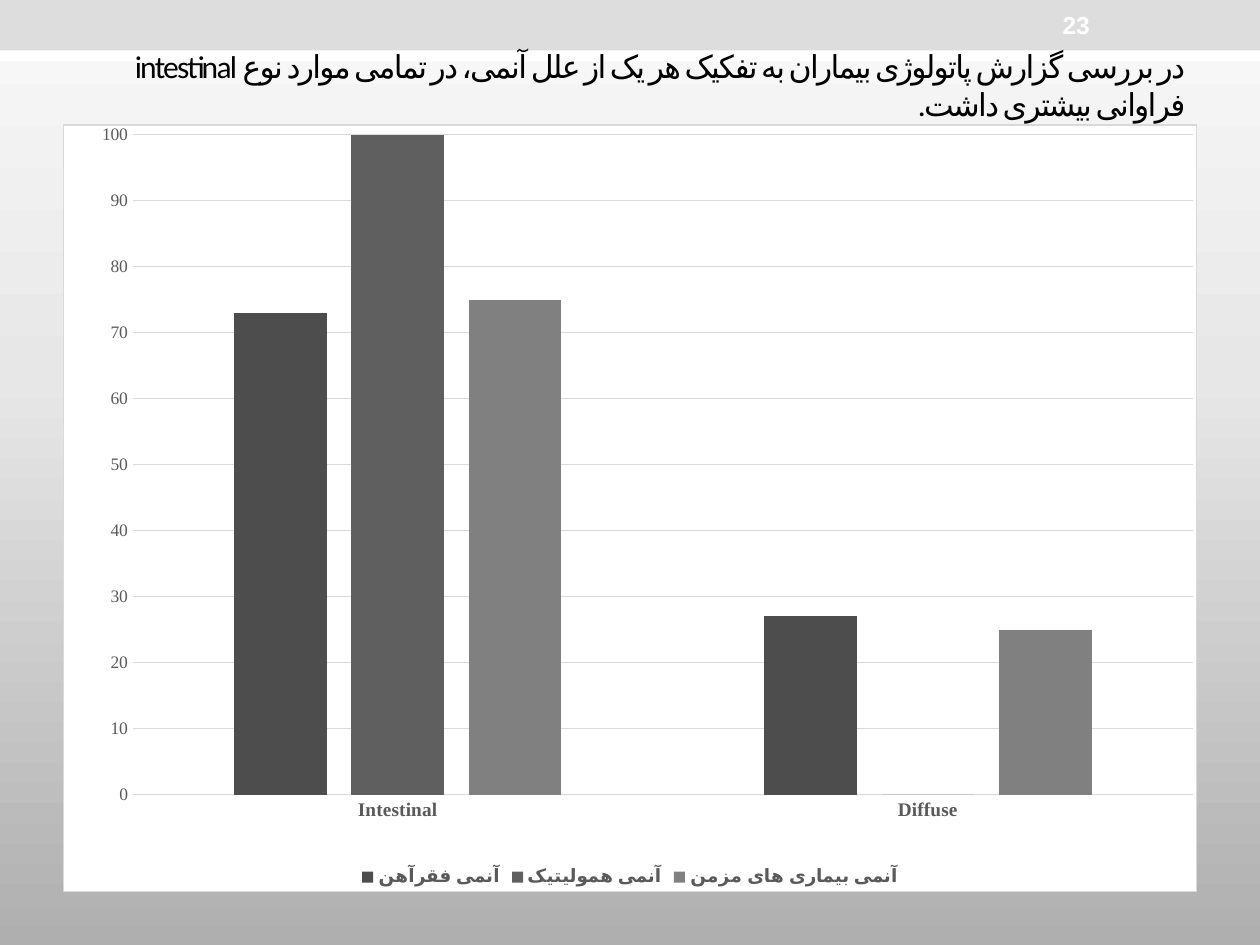
from copy import deepcopy
from typing import NamedTuple

from lxml import etree
from pptx import Presentation
from pptx.chart.data import CategoryChartData
from pptx.dml.color import RGBColor
from pptx.enum.chart import XL_CHART_TYPE, XL_LEGEND_POSITION, XL_TICK_MARK
from pptx.enum.shapes import MSO_SHAPE
from pptx.enum.text import MSO_ANCHOR, MSO_AUTO_SIZE, PP_ALIGN
from pptx.oxml import parse_xml
from pptx.oxml.ns import nsdecls, qn
from pptx.util import Pt

COLUMNS = XL_CHART_TYPE.COLUMN_CLUSTERED
BOTTOM = XL_LEGEND_POSITION.BOTTOM
NO_TICKS = XL_TICK_MARK.NONE
RECTANGLE = MSO_SHAPE.RECTANGLE
MIDDLE = MSO_ANCHOR.MIDDLE
FIXED = MSO_AUTO_SIZE.NONE
RIGHT, CENTER = PP_ALIGN.RIGHT, PP_ALIGN.CENTER

BLACK = RGBColor(0x00, 0x00, 0x00)
WHITE = RGBColor(0xFF, 0xFF, 0xFF)
BAND_GRAY = RGBColor(0xDD, 0xDD, 0xDD)
GRID_GRAY = RGBColor(0xD9, 0xD9, 0xD9)
LABEL_GRAY = RGBColor(0x59, 0x59, 0x59)
BACKGROUND_STOPS = [
    (0, RGBColor(0xF9, 0xF9, 0xF9)),
    (0.4, RGBColor(0xE7, 0xE7, 0xE7)),
    (1, RGBColor(0xAF, 0xAF, 0xAF)),
]

TITLE = ("در بررسی گزارش پاتولوژی بیماران به تفکیک هر یک از علل آنمی، "
         "در تمامی موارد نوع intestinal فراوانی بیشتری داشت.")
TITLE_FONT = {"name": "Calibri", "size": Pt(18)}
NUMBER_FONT = {"name": "Arial", "size": Pt(14), "bold": True}
CHART_FONT = {"name": "Arial", "size": Pt(10)}
CATEGORY_FONT = {"name": "Times New Roman", "size": Pt(11), "bold": True}
VALUE_FONT = {"name": "Times New Roman", "size": Pt(10), "bold": False}
LEGEND_FONT = {"name": "Arial", "size": Pt(10.5), "bold": True}
PLOT_PERCENT = {"x": 6.1, "y": 1.3, "w": 93.6, "h": 86.1}


class Box(NamedTuple):
    left: float
    top: float
    width: float
    height: float

    def lengths(self) -> list:
        return [Pt(value) for value in self]


class Band(NamedTuple):
    box: Box
    color: RGBColor


class Series(NamedTuple):
    name: str
    values: tuple
    color: RGBColor


BANDS = [Band(Box(0, 17.3, 720, 18), WHITE), Band(Box(0, 0, 720, 28.8), BAND_GRAY)]
TITLE_BOX = Box(36.7, 26, 648, 45.4)
NUMBER_BOX = Box(590, 1.5, 50, 25)
CHART_BOX = Box(36, 71, 648, 438.7)
CATEGORIES = ["Intestinal", "Diffuse"]
SERIES = [
    Series("آنمی فقرآهن", (73, 27), RGBColor(0x4D, 0x4D, 0x4D)),
    Series("آنمی همولیتیک", (100, 0), RGBColor(0x5F, 0x5F, 0x5F)),
    Series("آنمی بیماری های مزمن", (75, 25), RGBColor(0x80, 0x80, 0x80)),
]


def apply_format(target, values: dict) -> None:
    for name, value in values.items():
        setattr(target, name, value)


def format_font(font, values: dict, color: RGBColor) -> None:
    apply_format(font, values)
    font.color.rgb = color


def format_line(line, color: RGBColor) -> None:
    line.color.rgb = color
    line.width = Pt(0.75)


def paint_background(slide) -> None:
    fill = slide.background.fill
    fill.gradient()
    fill.gradient_angle = 270
    stop_list = next(slide.element.iter(qn("a:gsLst")))
    stop_list.insert(1, deepcopy(stop_list[0]))
    for stop, (position, color) in zip(fill.gradient_stops, BACKGROUND_STOPS):
        stop.position = position
        stop.color.rgb = color


def add_band(slide, band: Band) -> None:
    """Draw a header band behind the title."""
    shape = slide.shapes.add_shape(RECTANGLE, *band.box.lengths())
    shape.shadow.inherit = False
    shape.fill.solid()
    shape.fill.fore_color.rgb = band.color
    shape.line.fill.background()
    slide.shapes.title.element.addprevious(shape.element)


def write_text(shape, text: str, alignment, font: dict, color: RGBColor):
    frame = shape.text_frame
    apply_format(frame, {"word_wrap": True, "auto_size": FIXED,
                         "vertical_anchor": MIDDLE})
    paragraph = frame.paragraphs[0]
    paragraph.alignment = alignment
    run = paragraph.add_run()
    run.text = text
    format_font(run.font, font, color)
    return paragraph


def fill_title(title) -> None:
    names = ("left", "top", "width", "height")
    apply_format(title, dict(zip(names, TITLE_BOX.lengths())))
    paragraph = write_text(title, TITLE, RIGHT, TITLE_FONT, BLACK)
    paragraph._p.get_or_add_pPr().set("rtl", "1")
    properties = paragraph.runs[0]._r.get_or_add_rPr()
    properties.set("spc", "-100")
    properties.set("lang", "fa-IR")
    complex_script = etree.SubElement(properties, qn("a:cs"))
    complex_script.set("typeface", TITLE_FONT["name"])


def frame_chart(chart) -> None:
    """Set the chart's white ground, its border and the inner plot area."""
    chart_space = chart.element
    chart_space.find(qn("c:chart")).addnext(parse_xml(
        f'<c:spPr {nsdecls("c", "a")}>'
        f'<a:solidFill><a:srgbClr val="{WHITE}"/></a:solidFill>'
        f'<a:ln w="{Pt(0.75)}"><a:solidFill><a:srgbClr val="{GRID_GRAY}"/>'
        '</a:solidFill></a:ln></c:spPr>'))
    plot_area = next(chart_space.iter(qn("c:plotArea")))
    for old_layout in plot_area.findall(qn("c:layout")):
        plot_area.remove(old_layout)
    layout = etree.Element(qn("c:layout"))
    manual = etree.SubElement(layout, qn("c:manualLayout"))
    settings = {"layoutTarget": "inner", "xMode": "edge", "yMode": "edge"}
    settings.update({name: f"{value / 100:.3f}" for name, value in PLOT_PERCENT.items()})
    for name, value in settings.items():
        etree.SubElement(manual, qn(f"c:{name}")).set("val", value)
    plot_area.insert(0, layout)


def add_anemia_chart(slide) -> None:
    data = CategoryChartData()
    data.categories = CATEGORIES
    for series in SERIES:
        data.add_series(series.name, series.values)
    chart = slide.shapes.add_chart(COLUMNS, *CHART_BOX.lengths(), data).chart
    format_font(chart.font, CHART_FONT, BLACK)
    apply_format(chart, {"has_title": False, "has_legend": True})
    apply_format(chart.legend, {"position": BOTTOM, "include_in_layout": False})
    format_font(chart.legend.font, LEGEND_FONT, LABEL_GRAY)

    plot = chart.plots[0]
    apply_format(plot, {"gap_width": 219, "overlap": -27, "vary_by_categories": False})
    for drawn, series in zip(plot.series, SERIES):
        drawn.format.fill.solid()
        drawn.format.fill.fore_color.rgb = series.color

    category_axis, value_axis = chart.category_axis, chart.value_axis
    for axis, font in ((category_axis, CATEGORY_FONT), (value_axis, VALUE_FONT)):
        apply_format(axis, {"major_tick_mark": NO_TICKS, "minor_tick_mark": NO_TICKS})
        format_font(axis.tick_labels.font, font, LABEL_GRAY)
    format_line(category_axis.format.line, GRID_GRAY)
    apply_format(value_axis, {"minimum_scale": 0, "maximum_scale": 100,
                              "major_unit": 10, "has_major_gridlines": True})
    value_axis.format.line.fill.background()
    format_line(value_axis.major_gridlines.format.line, GRID_GRAY)
    frame_chart(chart)


def main() -> None:
    presentation = Presentation()
    presentation.slide_width, presentation.slide_height = Pt(720), Pt(540)
    slide = presentation.slides.add_slide(presentation.slide_layouts[5])
    paint_background(slide)
    for band in BANDS:
        add_band(slide, band)
    fill_title(slide.shapes.title)
    number = slide.shapes.add_textbox(*NUMBER_BOX.lengths())
    write_text(number, "23", CENTER, NUMBER_FONT, WHITE)
    add_anemia_chart(slide)
    presentation.save("out.pptx")


if __name__ == "__main__":
    main()
